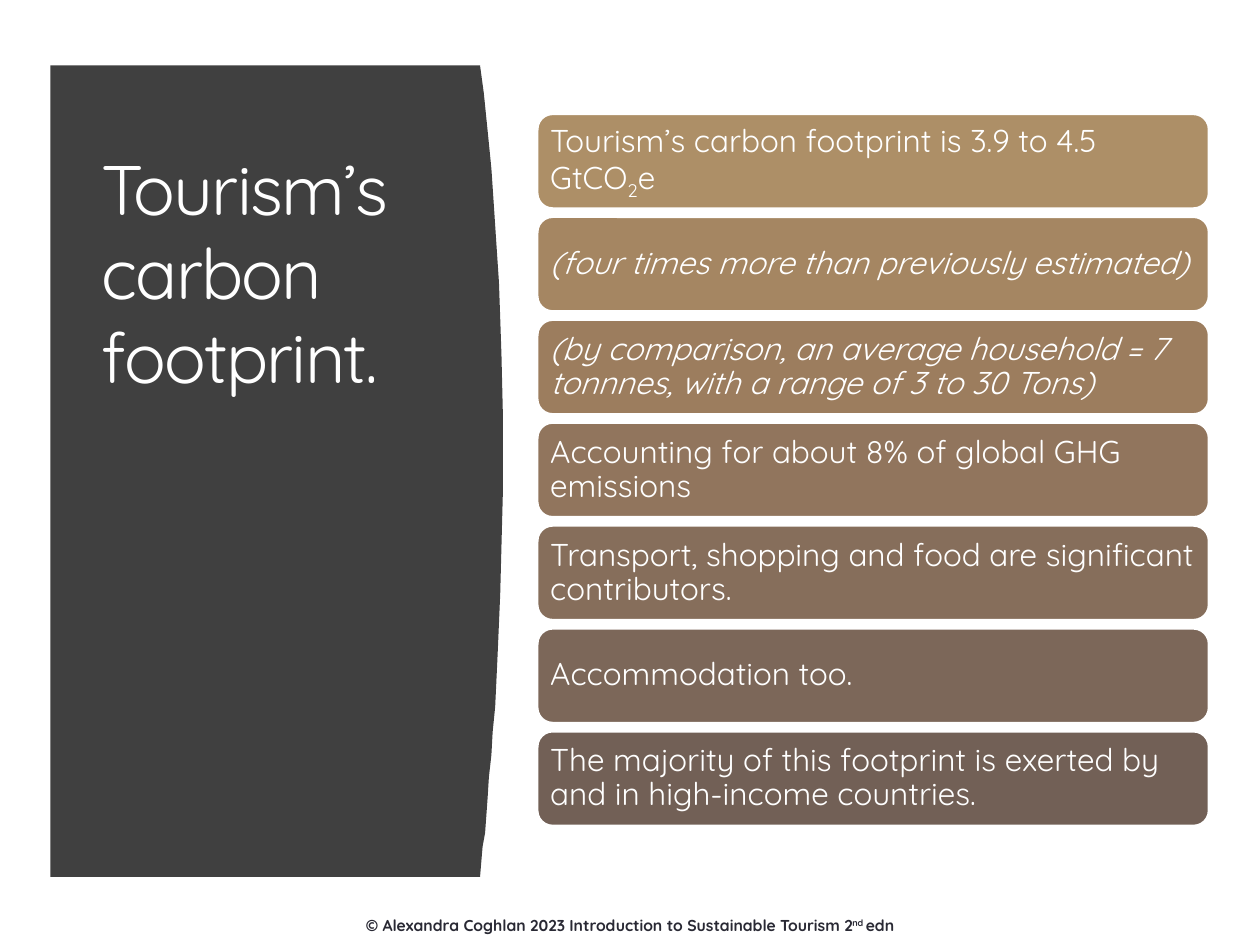
from pptx import Presentation
from pptx.dml.color import RGBColor
from pptx.enum.shapes import MSO_SHAPE as SHAPE
from pptx.enum.text import MSO_ANCHOR as ANCHOR, PP_ALIGN as ALIGN
from pptx.util import Inches, Pt

WHITE, DARK, INK = "FFFFFF", "404040", "292934"

PANEL = [
    (0.4, 0.52), (3.81, 0.52), (3.84, 0.74), (3.87, 1.04), (3.9, 1.34),
    (3.92, 1.64), (3.94, 1.94), (3.96, 2.24), (3.97, 2.53), (3.98, 2.82),
    (3.99, 3.25), (3.99, 3.94), (3.98, 4.33), (3.97, 4.71), (3.96, 4.95),
    (3.95, 5.18), (3.94, 5.4), (3.93, 5.61), (3.91, 5.81), (3.9, 5.99),
    (3.88, 6.17), (3.87, 6.33), (3.85, 6.61), (3.83, 6.72), (3.81, 6.96),
    (0.4, 6.96),
]

FACTS = [
    ("AD8F67", False, [("Tourism’s carbon footprint is 3.9 to 4.5 GtCO", 0), ("2", -25), ("e", 0)]),
    ("A58662", True, [("(four times more than previously estimated)", 0)]),
    ("9C7D5E", True, [("(by comparison, an average household = 7 tonnnes, "
                       "with a range of 3 to 30 Tons)", 0)]),
    ("91755D", False, [("Accounting for about 8% of global GHG emissions", 0)]),
    ("866E5B", False, [("Transport, shopping and food are significant contributors.", 0)]),
    ("7C6759", False, [("Accommodation too.", 0)]),
    ("726056", False, [("The majority of this footprint is exerted by and in "
                        "high-income countries.", 0)]),
]


def color(value):
    return RGBColor.from_string(value)


class Deck:
    font = "Quicksand"

    def __init__(self, width, height):
        self.prs = Presentation()
        self.prs.slide_width = Inches(width)
        self.prs.slide_height = Inches(height)
        self.s = self.prs.slides.add_slide(self.prs.slide_layouts[6])

    def add_runs(self, tf, runs, size, fill, bold=False, italic=False, spacing=0):
        tf.word_wrap = True
        p = tf.paragraphs[0]
        for text, baseline in runs:
            r = p.add_run()
            r.text = text
            r.font.name = self.font
            r.font.size = Pt(size)
            r.font.bold = bold
            r.font.italic = italic
            r.font.color.rgb = color(fill)
            rpr = r._r.get_or_add_rPr()
            if baseline:
                rpr.set("baseline", str(baseline * 1000))
            if spacing:
                rpr.set("spc", str(spacing * 100))
        return p

    def text(self, box, runs, size, fill, align=ALIGN.LEFT, **style):
        sp = self.s.shapes.add_textbox(*map(Inches, box))
        p = self.add_runs(sp.text_frame, runs, size, fill, **style)
        p.alignment = align

    def outline(self, points, fill):
        builder = self.s.shapes.build_freeform(
            Inches(points[0][0]), Inches(points[0][1]))
        builder.add_line_segments([(Inches(x), Inches(y)) for x, y in points[1:]])
        sp = builder.convert_to_shape()
        sp.shadow.inherit = False
        sp.fill.solid()
        sp.fill.fore_color.rgb = color(fill)
        sp.line.fill.background()

    def card(self, box, runs, fill, italic):
        sp = self.s.shapes.add_shape(SHAPE.ROUNDED_RECTANGLE, *map(Inches, box))
        sp.shadow.inherit = False
        sp.fill.solid()
        sp.fill.fore_color.rgb = color(fill)
        sp.line.color.rgb = color(WHITE)
        sp.line.width = Pt(2.08)
        tf = sp.text_frame
        tf.vertical_anchor = ANCHOR.MIDDLE
        tf.margin_left = tf.margin_right = Inches(0.07)
        tf.margin_top = tf.margin_bottom = Inches(0.07)
        p = self.add_runs(tf, runs, 18, WHITE, italic=italic)
        p.alignment = ALIGN.LEFT
        p.line_spacing = 0.9

    def save(self):
        self.prs.save("out.pptx")


def main():
    deck = Deck(10, 7.5)
    deck.text((2.64, 7.22, 4.72, 0.25),
              [("© Alexandra Coghlan 2023 Introduction to Sustainable Tourism 2", 0),
               ("nd ", 30), ("edn", 0)],
              9, INK, ALIGN.CENTER, bold=True)
    deck.outline(PANEL, DARK)
    deck.text((0.71, 1.11, 2.8, 5.24), [("Tourism’s carbon footprint.", 0)],
              40, WHITE, spacing=-1)
    top, bottom = 0.9, 6.56
    height = 0.76
    pitch = (bottom - height - top) / (len(FACTS) - 1)
    for i, (fill, italic, runs) in enumerate(FACTS):
        deck.card((4.26, top + i * pitch, 5.34, height), runs, fill, italic)
    deck.save()


if __name__ == "__main__":
    main()
